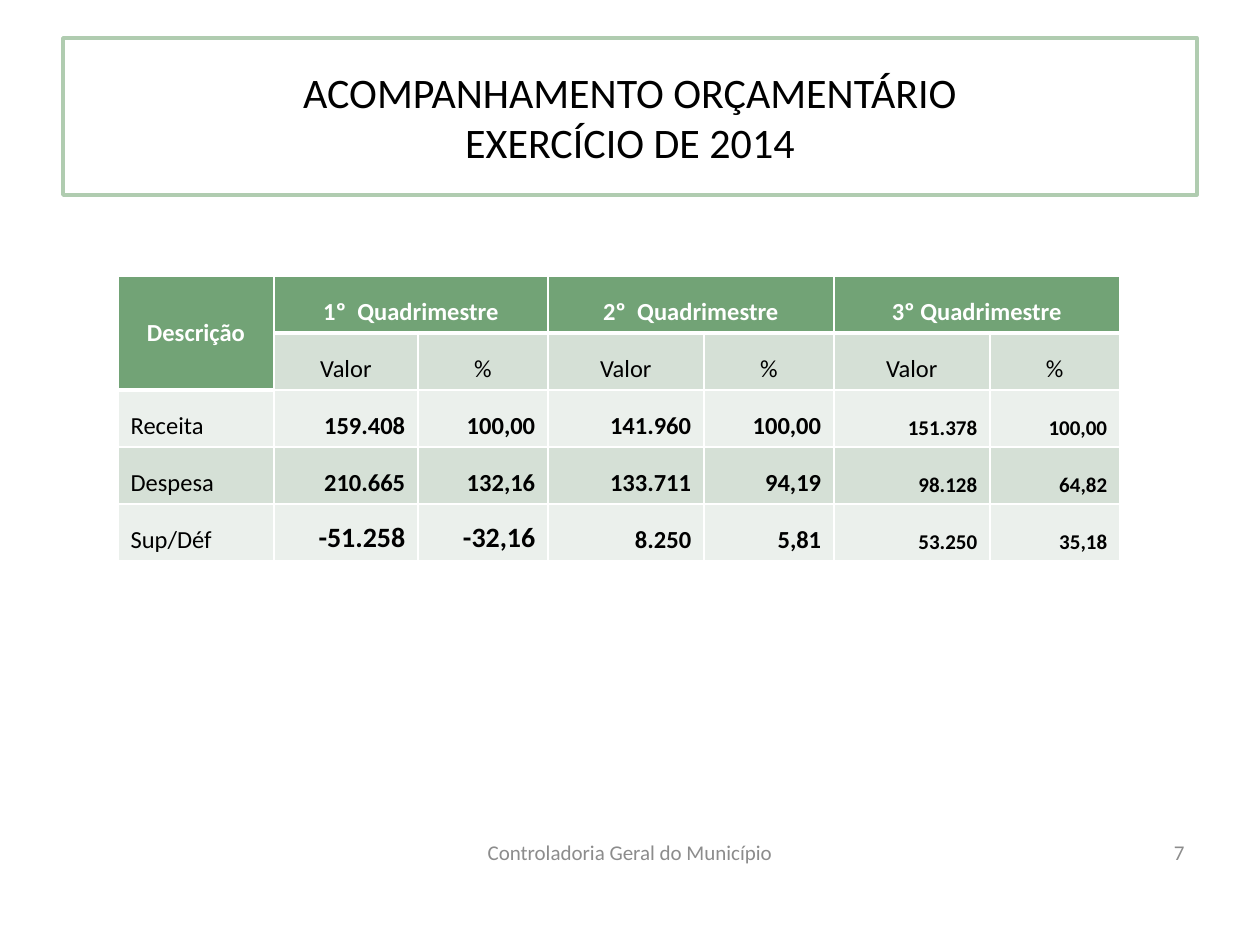
from typing import NamedTuple

from lxml.etree import SubElement
from pptx import Presentation
from pptx.dml.color import RGBColor
from pptx.enum.shapes import MSO_SHAPE
from pptx.enum.text import MSO_ANCHOR, PP_ALIGN
from pptx.oxml.ns import qn
from pptx.util import Emu, Pt

PX_PER_INCH = 126
FONT = "Calibri"
BLACK, WHITE, GREY = "000000", "FFFFFF", "8C8C8C"
HEADER_GREEN, BAND_GREEN, PALE_GREEN, FRAME_GREEN = "72A376", "D5E0D6", "EBF0EC", "B0CCB0"


class Style(NamedTuple):
    size: int
    color: str = BLACK
    bold: bool = False
    align: PP_ALIGN = PP_ALIGN.CENTER
    anchor: MSO_ANCHOR = MSO_ANCHOR.MIDDLE


class FooterText(NamedTuple):
    text: str
    left: int
    top: int
    width: int
    height: int
    align: PP_ALIGN


class BudgetRow(NamedTuple):
    label: str
    figures: list[str]
    sizes: list[int]  # one text size per four-month period
    fill: str


def px(length: int) -> Emu:
    return Emu(round(length * 914400 / PX_PER_INCH))


def rgb(color: str) -> RGBColor:
    return RGBColor.from_string(color)


def write(frame, lines: list[str], style: Style) -> None:
    frame.word_wrap = True
    paragraph = frame.paragraphs[0]
    paragraph.alignment = style.align
    for number, line in enumerate(lines):
        if number:
            paragraph.add_line_break()
        run = paragraph.add_run()
        run.text = line
        run.font.name = FONT
        run.font.size = Pt(style.size)
        run.font.bold = style.bold
        run.font.color.rgb = rgb(style.color)


def set_borders(cell, top: int, bottom: int) -> None:
    """Draw white borders, in points; they precede the fill in the cell."""
    properties = cell._tc.get_or_add_tcPr()
    widths = {"a:lnL": 1, "a:lnR": 1, "a:lnT": top, "a:lnB": bottom}
    for tag, width in widths.items():
        border = SubElement(properties, qn(tag), w=str(Pt(width)))
        fill = SubElement(border, qn("a:solidFill"))
        SubElement(fill, qn("a:srgbClr"), val=WHITE)


def format_cell(cell, fill: str, top: int = 1, bottom: int = 1) -> None:
    set_borders(cell, top, bottom)
    cell.fill.solid()
    cell.fill.fore_color.rgb = rgb(fill)


def fill_cell(cell, text: str, style: Style) -> None:
    cell.vertical_anchor = style.anchor
    write(cell.text_frame, [text], style)


def draw_title(slide, lines: list[str]) -> None:
    frame = slide.shapes.add_shape(MSO_SHAPE.RECTANGLE, px(63), px(38), px(1134), px(157))
    frame.shadow.inherit = False
    frame.fill.solid()
    frame.fill.fore_color.rgb = rgb(WHITE)
    frame.line.color.rgb = rgb(FRAME_GREEN)
    frame.line.width = Pt(2)
    frame.text_frame.vertical_anchor = MSO_ANCHOR.MIDDLE
    write(frame.text_frame, lines, Style(24))


def draw_footer(slide, footer: FooterText) -> None:
    box = slide.shapes.add_textbox(
        px(footer.left), px(footer.top), px(footer.width), px(footer.height))
    box.text_frame.vertical_anchor = MSO_ANCHOR.MIDDLE
    write(box.text_frame, [footer.text], Style(12, GREY, align=footer.align))


def draw_budget(slide, periods: list[str], rows: list[BudgetRow]) -> None:
    column_widths = [156, 144, 130, 156, 130, 156, 130]
    row_height = 57
    row_count = len(rows) + 2
    table = slide.shapes.add_table(
        row_count, len(column_widths), px(118), px(276),
        px(sum(column_widths)), px(row_height * row_count)).table
    for column, width in zip(table.columns, column_widths):
        column.width = px(width)
    for row in table.rows:
        row.height = px(row_height)

    # Fills and borders, with a thick rule below the green header
    fills = [HEADER_GREEN, BAND_GREEN] + [row.fill for row in rows]
    for row_index, fill in enumerate(fills):
        for column_index in range(len(column_widths)):
            last_header = 0 if column_index else 1
            format_cell(
                table.cell(row_index, column_index),
                HEADER_GREEN if row_index <= last_header else fill,
                top=3 if row_index == last_header + 1 else 1,
                bottom=3 if row_index == last_header else 1)

    # Header
    header = Style(14, WHITE, bold=True)
    table.cell(0, 0).merge(table.cell(1, 0))
    fill_cell(table.cell(0, 0), "Descrição", header)
    low = MSO_ANCHOR.BOTTOM
    for index, period in enumerate(periods):
        first = 1 + 2 * index
        table.cell(0, first).merge(table.cell(0, first + 1))
        fill_cell(table.cell(0, first), period, header._replace(anchor=low))
        for offset, measure in enumerate(["Valor", "%"]):
            fill_cell(table.cell(1, first + offset), measure, Style(14, anchor=low))

    # Figures
    for row_index, row in enumerate(rows, start=2):
        fill_cell(table.cell(row_index, 0), row.label,
                  Style(14, align=PP_ALIGN.LEFT, anchor=low))
        for index, figure in enumerate(row.figures):
            fill_cell(table.cell(row_index, index + 1), figure,
                      Style(row.sizes[index // 2], BLACK, True, PP_ALIGN.RIGHT, low))


def main() -> None:
    presentation = Presentation()
    presentation.slide_width, presentation.slide_height = px(1260), px(945)
    slide = presentation.slides.add_slide(presentation.slide_layouts[6])

    draw_title(slide, ["ACOMPANHAMENTO ORÇAMENTÁRIO", "EXERCÍCIO DE 2014"])

    for footer in [
        FooterText("Controladoria Geral do Município", 430, 808, 400, 88, PP_ALIGN.CENTER),
        FooterText("7", 903, 827, 294, 50, PP_ALIGN.RIGHT),
    ]:
        draw_footer(slide, footer)

    draw_budget(
        slide,
        ["1º  Quadrimestre", "2º  Quadrimestre", "3º Quadrimestre"],
        [
            BudgetRow("Receita",
                      ["159.408", "100,00", "141.960", "100,00", "151.378", "100,00"],
                      [14, 14, 12], PALE_GREEN),
            BudgetRow("Despesa",
                      ["210.665", "132,16", "133.711", "94,19", "98.128", "64,82"],
                      [14, 14, 12], BAND_GREEN),
            BudgetRow("Sup/Déf",
                      ["-51.258", "-32,16", "8.250", "5,81", "53.250", "35,18"],
                      [16, 14, 12], PALE_GREEN),
        ])

    presentation.save("out.pptx")


if __name__ == "__main__":
    main()
